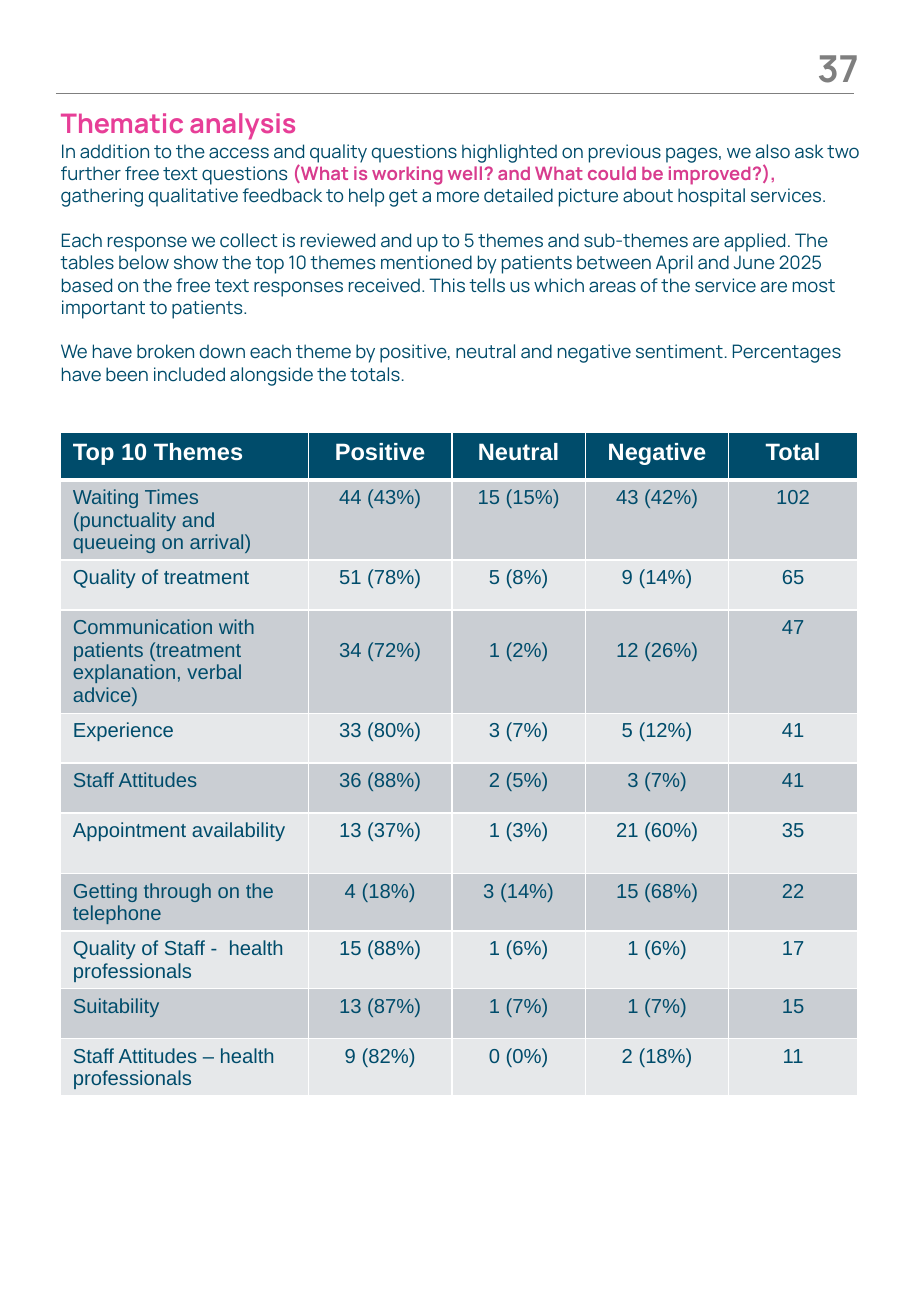
from dataclasses import dataclass

from lxml import etree
from pptx import Presentation
from pptx import util as u
from pptx.dml.color import RGBColor
from pptx.enum import shapes, text
from pptx.oxml import ns
from pptx.util import Inches


@dataclass(frozen=True)
class Theme:
    heading_font: str = "Manrope"
    table_font: str = "Arial"
    navy: str = "004C6B"
    pink: str = "E73E97"
    question_pink: str = "D83C8E"
    grey: str = "7F7F7F"
    white: str = "FFFFFF"
    bands: tuple = ("CACED3", "E6E8EA")
    number_size: float = 22
    title_size: float = 16
    header_size: float = 14
    cell_size: float = 12
    body_size: float = 11
    title_leading: float = 19.2
    body_leading: float = 13.2


theme = Theme()


def style_runs(paragraph, font_name, size, color, bold=False):
    for run in paragraph.runs:
        run.font.name = font_name
        run.font.size = u.Pt(size)
        run.font.bold = bold
        run.font.color.rgb = RGBColor.from_string(color)


def prepare_frame(shape):
    frame = shape.text_frame
    frame.word_wrap = True
    frame.auto_size = text.MSO_AUTO_SIZE.NONE
    frame.vertical_anchor = text.MSO_ANCHOR.TOP
    frame.margin_left = frame.margin_right = frame.margin_top = frame.margin_bottom = 0
    return frame


presentation = Presentation()
presentation.slide_width = Inches(7.5)
presentation.slide_height = Inches(10.83)
slide = presentation.slides.add_slide(presentation.slide_layouts[5])

# Header rule and page number
rule = slide.shapes.add_connector(
    shapes.MSO_CONNECTOR.STRAIGHT, Inches(0.46), Inches(0.77), Inches(7.03), Inches(0.77))
rule.line.color.rgb = RGBColor.from_string(theme.grey)
rule.line.width = u.Pt(0.75)
etree.SubElement(rule._element.spPr, ns.qn("a:effectLst"))

number_box = slide.shapes.add_textbox(Inches(6.43), Inches(0.37), Inches(0.64), Inches(0.39))
number = prepare_frame(number_box).paragraphs[0]
number.text = "37"
number.alignment = text.PP_ALIGN.RIGHT
style_runs(number, theme.heading_font, theme.number_size, theme.grey, True)

# Title
title = slide.shapes.title
title.left, title.top = Inches(0.5), Inches(0.88)
title.width, title.height = Inches(6.61), Inches(0.27)
heading = prepare_frame(title).paragraphs[0]
heading.text = "Thematic analysis"
heading.alignment = text.PP_ALIGN.LEFT
heading.line_spacing = u.Pt(theme.title_leading)
style_runs(heading, theme.heading_font, theme.title_size, theme.pink, True)

# Introduction: each paragraph is a list of runs, the second run being the questions
introduction = [
    ["In addition to the access and quality questions highlighted on previous pages, "
     "we also ask two further free text questions ",
     "(What is working well? and What could be improved?), ",
     "gathering qualitative feedback to help get a more detailed picture about hospital services."],
    ["Each response we collect is reviewed and up to 5 themes and sub-themes are applied. "
     "The tables below show the top 10 themes mentioned by patients between April and June 2025 "
     "based on the free text responses received. This tells us which areas of the service are "
     "most important to patients."],
    ["We have broken down each theme by positive, neutral and negative sentiment. "
     "Percentages have been included alongside the totals."],
]
body_box = slide.shapes.add_textbox(Inches(0.5), Inches(1.15), Inches(6.61), Inches(2.05))
body = prepare_frame(body_box)
for index, pieces in enumerate(introduction):
    paragraph = body.add_paragraph() if index else body.paragraphs[0]
    for piece in pieces:
        paragraph.add_run().text = piece
    paragraph.line_spacing = u.Pt(theme.body_leading)
    paragraph.space_before = u.Pt(theme.body_leading if index else 0)
    style_runs(paragraph, theme.heading_font, theme.body_size, theme.navy)
    if len(pieces) > 1:
        questions = paragraph.runs[1].font
        questions.bold = True
        questions.color.rgb = RGBColor.from_string(theme.question_pink)

# Themes table: row height, then the cell texts
rows = [
    (0.39, "Top 10 Themes", "Positive", "Neutral", "Negative", "Total"),
    (0.66, "Waiting Times (punctuality and queueing on arrival)",
     "44 (43%)", "15 (15%)", "43 (42%)", "102"),
    (0.41, "Quality of treatment", "51 (78%)", "5 (8%)", "9 (14%)", "65"),
    (0.85, "Communication with patients (treatment explanation, verbal advice)",
     "34 (72%)", "1 (2%)", "12 (26%)", "47"),
    (0.41, "Experience", "33 (80%)", "3 (7%)", "5 (12%)", "41"),
    (0.41, "Staff Attitudes", "36 (88%)", "2 (5%)", "3 (7%)", "41"),
    (0.5, "Appointment availability", "13 (37%)", "1 (3%)", "21 (60%)", "35"),
    (0.47, "Getting through on the telephone", "4 (18%)", "3 (14%)", "15 (68%)", "22"),
    (0.47, "Quality of Staff -  health professionals", "15 (88%)", "1 (6%)", "1 (6%)", "17"),
    (0.41, "Suitability", "13 (87%)", "1 (7%)", "1 (7%)", "15"),
    (0.47, "Staff Attitudes – health professionals", "9 (82%)", "0 (0%)", "2 (18%)", "11"),
]
column_widths = [2.04, 1.18, 1.1, 1.18, 1.06]
lowered_row = 3  # its sentiment values sit one line lower

table = slide.shapes.add_table(
    len(rows), len(column_widths), Inches(0.5), Inches(3.56),
    Inches(sum(column_widths)), Inches(sum(row[0] for row in rows))).table
for column, width in zip(table.columns, column_widths):
    column.width = Inches(width)

for row_index, (height, *values) in enumerate(rows):
    table.rows[row_index].height = Inches(height)
    is_header = row_index == 0
    fill_color = theme.navy if is_header else theme.bands[(row_index - 1) % 2]
    for column_index, value in enumerate(values):
        cell = table.cell(row_index, column_index)
        cell.margin_left = cell.margin_right = Inches(0.1)
        is_lowered = row_index == lowered_row and column_index in (1, 2, 3)
        cell.margin_top = Inches(0.24 if is_lowered else 0.05)
        cell.margin_bottom = Inches(0.05)

        # White borders, heavier under the header
        properties = cell._tc.get_or_add_tcPr()
        for side in ("L", "R", "T", "B"):
            heavy = (row_index, side) in ((0, "B"), (1, "T"))
            border = etree.SubElement(
                properties, ns.qn(f"a:ln{side}"), w=str(u.Pt(3 if heavy else 1)))
            line_fill = etree.SubElement(border, ns.qn("a:solidFill"))
            etree.SubElement(line_fill, ns.qn("a:srgbClr"), val=theme.white)
        cell.fill.solid()
        cell.fill.fore_color.rgb = RGBColor.from_string(fill_color)

        paragraph = cell.text_frame.paragraphs[0]
        paragraph.text = value
        paragraph.alignment = text.PP_ALIGN.CENTER if column_index else text.PP_ALIGN.LEFT
        style_runs(paragraph, theme.table_font,
                   theme.header_size if is_header else theme.cell_size,
                   theme.white if is_header else theme.navy, is_header)

presentation.save("out.pptx")
